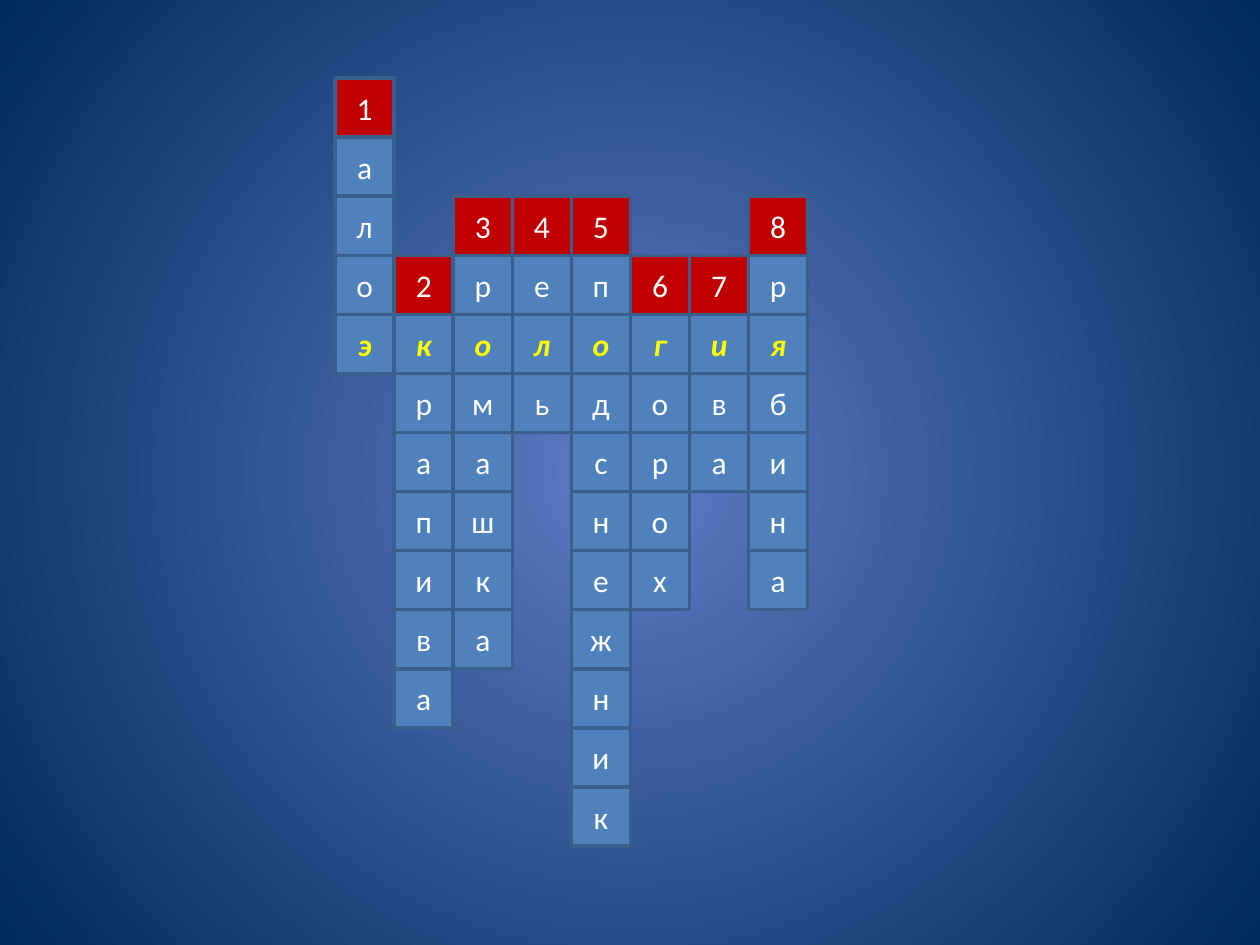
import pptx
import pptx.util
import pptx.dml.color
import pptx.enum.shapes
import pptx.enum.text
import pptx.oxml
import pptx.oxml.ns

Inches = pptx.util.Inches

COLORS = {
    "glow": "5E7CC5",
    "edge": "00295C",
    "cell": "4F81BD",
    "number": "C00000",
    "border": "3A5F8C",
    "letter": "FFFFFF",
    "keyword": "FFFF00",
}

# Square grid, sixteen cells to the slide height
CELL = Inches(7.5 / 16)
LEFT, TOP = Inches(2.66), Inches(0.62)
KEY_ROW = 4

# Row of the number cell, clue number, answer read downwards
ANSWERS = [
    (0, "1", "алоэ"),
    (3, "2", "крапива"),
    (2, "3", "ромашка"),
    (2, "4", "ель"),
    (2, "5", "подснежник"),
    (3, "6", "горох"),
    (3, "7", "ива"),
    (2, "8", "рябина"),
]

BASE_FONT = {"name": "Calibri", "size": pptx.util.Pt(18)}
KEY_FONT = {**BASE_FONT, "bold": True, "italic": True}


def rgb(name):
    return pptx.dml.color.RGBColor.from_string(COLORS[name])


def set_background(s):
    """Radial gradient from the middle of the slide to its corners."""
    fill = s.background.fill
    fill.gradient()
    for stop, name in zip(fill.gradient_stops, ("glow", "edge")):
        stop.color.rgb = rgb(name)
    lin = s.element.xpath(".//a:gradFill/a:lin")[0]
    radial = pptx.oxml.parse_xml(
        f'<a:path {pptx.oxml.ns.nsdecls("a")} path="circle">'
        '<a:fillToRect l="50000" t="50000" r="50000" b="50000"/></a:path>'
    )
    lin.getparent().replace(lin, radial)


def add_cell(s, col, row, text, fill, color="letter", font=BASE_FONT):
    sp = s.shapes.add_shape(
        pptx.enum.shapes.MSO_SHAPE.RECTANGLE,
        LEFT + col * CELL, TOP + row * CELL, CELL, CELL,
    )
    sp.shadow.inherit = False
    sp.fill.solid()
    sp.fill.fore_color.rgb = rgb(fill)
    sp.line.color.rgb = rgb("border")
    sp.line.width = pptx.util.Pt(2)
    tf = sp.text_frame
    tf.vertical_anchor = pptx.enum.text.MSO_ANCHOR.MIDDLE
    p = tf.paragraphs[0]
    p.alignment = pptx.enum.text.PP_ALIGN.CENTER
    r = p.add_run()
    r.text = text
    for key, value in font.items():
        setattr(r.font, key, value)
    r.font.color.rgb = rgb(color)


def add_answer(s, col, start, number, word):
    """Number cell with the answer's letters below it."""
    add_cell(s, col, start, number, "number")
    for row, letter in enumerate(word, start + 1):
        if row == KEY_ROW:
            add_cell(s, col, row, letter, "cell", "keyword", KEY_FONT)
        else:
            add_cell(s, col, row, letter, "cell")


def main():
    prs = pptx.Presentation()
    prs.slide_width, prs.slide_height = Inches(10), Inches(7.5)
    s = prs.slides.add_slide(prs.slide_layouts[6])
    set_background(s)

    # Crossword, one column per answer
    for col, (start, number, word) in enumerate(ANSWERS):
        add_answer(s, col, start, number, word)

    prs.save("out.pptx")


if __name__ == "__main__":
    main()
